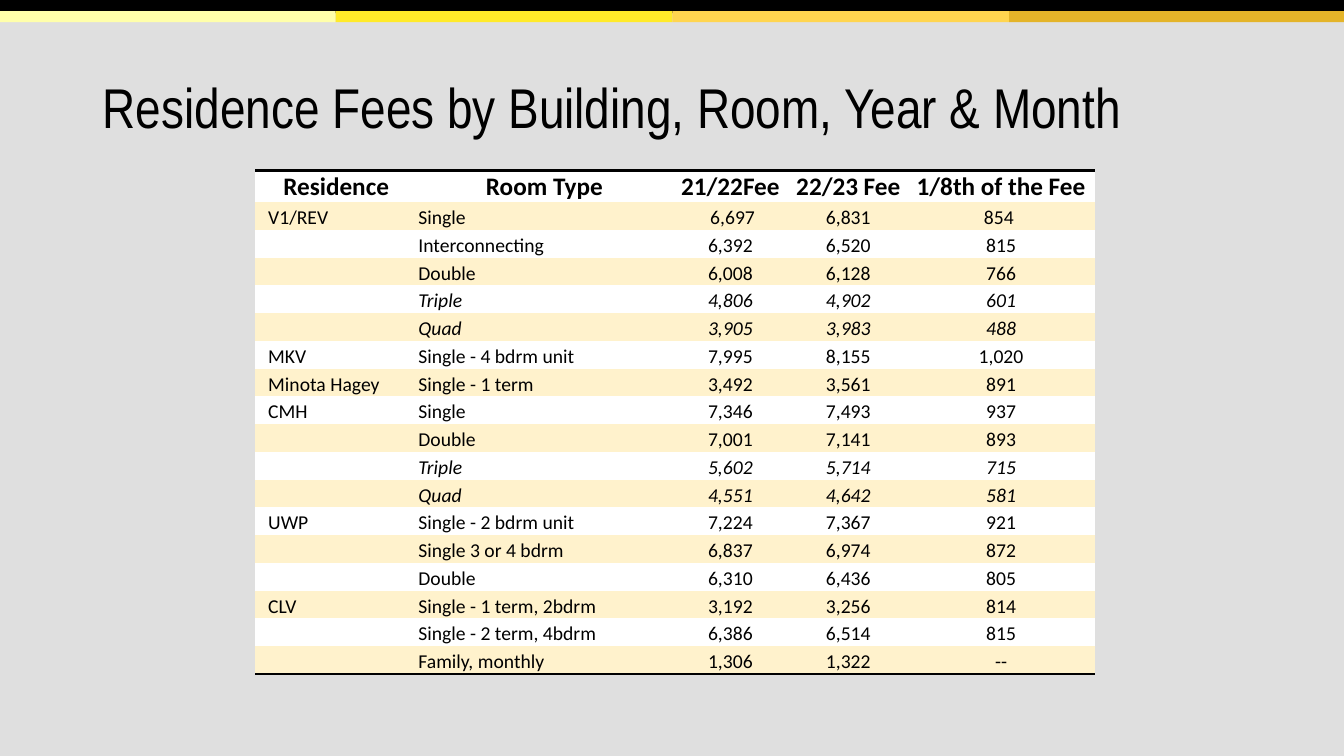
from typing import NamedTuple

from lxml import etree
from pptx import Presentation
from pptx.dml.color import RGBColor
from pptx.enum.shapes import MSO_SHAPE
from pptx.enum.text import MSO_ANCHOR, MSO_AUTO_SIZE, PP_ALIGN
from pptx.oxml.ns import qn
from pptx.util import Inches, Pt

RECTANGLE = MSO_SHAPE.RECTANGLE
MIDDLE, BOTTOM = MSO_ANCHOR.MIDDLE, MSO_ANCHOR.BOTTOM
LEFT, CENTER = PP_ALIGN.LEFT, PP_ALIGN.CENTER
NO_AUTOFIT = MSO_AUTO_SIZE.NONE
TITLE_ONLY_LAYOUT = 5
NO_GRID_STYLE = "{2D5ABB26-0587-4C30-8999-92F81FD0307C}"

COLORS = {
    "background": "DFDFDF",
    "black": "000000",
    "white": "FFFFFF",
    "cream": "FFF2CC",
    "pale yellow": "FFFFAA",
    "yellow": "FFEA29",
    "amber": "FFD54F",
    "gold": "E4B429",
}
TITLE_FONT, TABLE_FONT = "Arial Narrow", "Calibri"
HEADER_SIZE, BODY_SIZE = 18, 14
HEADER_HEIGHT, BODY_HEIGHT = 0.28, 4.68
COLUMN_WIDTHS = (1.61, 2.52, 1.17, 1.17, 1.86)
HEADINGS = ("Residence", "Room Type", "21/22Fee", "22/23 Fee", "1/8th of the Fee")


class Bar(NamedTuple):
    left: float
    top: float
    width: float
    height: float
    color: str


class Fee(NamedTuple):
    residence: str
    room: str
    last_year: str
    this_year: str
    eighth: str


class CellStyle(NamedTuple):
    fill: str
    size: int
    bold: bool = False
    italic: bool = False
    centered: bool = True
    indent: float = 0
    border: str = ""


BARS = [Bar(-0.01, 0, 13.35, 0.13, "black")] + [
    Bar(-0.01 + 3.34 * index, 0.11, 3.34, 0.11, color)
    for index, color in enumerate(("pale yellow", "yellow", "amber", "gold"))
]

FEES = [
    Fee("V1/REV", "Single", " 6,697", "6,831", "854 "),
    Fee("", "Interconnecting", "6,392", "6,520", "815"),
    Fee("", "Double", "6,008", "6,128", "766"),
    Fee("", "Triple", "4,806", "4,902", "601"),
    Fee("", "Quad", "3,905", "3,983", "488"),
    Fee("MKV", "Single - 4 bdrm unit", "7,995", "8,155", "1,020"),
    Fee("Minota Hagey", "Single - 1 term", "3,492", "3,561", "891"),
    Fee("CMH", "Single", "7,346", "7,493", "937"),
    Fee("", "Double", "7,001", "7,141", "893"),
    Fee("", "Triple", "5,602", "5,714", "715"),
    Fee("", "Quad", "4,551", "4,642", "581"),
    Fee("UWP", "Single - 2 bdrm unit", "7,224", "7,367", "921"),
    Fee("", "Single 3 or 4 bdrm", "6,837", "6,974", "872"),
    Fee("", "Double", "6,310", "6,436", "805"),
    Fee("CLV", "Single - 1 term, 2bdrm", "3,192", "3,256", "814"),
    Fee("", "Single - 2 term, 4bdrm", "6,386", "6,514", "815"),
    Fee("", "Family, monthly", "1,306", "1,322", "--"),
]


def rgb(name: str) -> RGBColor:
    return RGBColor.from_string(COLORS[name])


def draw_bar(slide, bar: Bar) -> None:
    shape = slide.shapes.add_shape(
        RECTANGLE, Inches(bar.left), Inches(bar.top), Inches(bar.width), Inches(bar.height)
    )
    shape.shadow.inherit = False
    shape.fill.solid()
    shape.fill.fore_color.rgb = rgb(bar.color)
    shape.line.fill.background()


def write_title(slide, text: str) -> None:
    title = slide.shapes.title
    title.left, title.top = Inches(0.92), Inches(0.79)
    title.width, title.height = Inches(11.5), Inches(0.6)
    text_frame = title.text_frame
    text_frame.text = text
    text_frame.auto_size = NO_AUTOFIT
    text_frame.vertical_anchor = MIDDLE
    paragraph = text_frame.paragraphs[0]
    paragraph.alignment = LEFT
    paragraph.line_spacing = 0.9
    font = paragraph.runs[0].font
    font.name, font.size = TITLE_FONT, Pt(40)
    font.color.rgb = rgb("black")


def add_border(cell, side: str) -> None:
    line = etree.Element(qn(f"a:{side}"), w=str(Pt(2)))
    solid = etree.SubElement(line, qn("a:solidFill"))
    etree.SubElement(solid, qn("a:srgbClr"), val=COLORS["black"])
    cell._tc.get_or_add_tcPr().insert(0, line)


def write_cell(cell, text: str, style: CellStyle) -> None:
    cell.fill.solid()
    cell.fill.fore_color.rgb = rgb(style.fill)
    cell.margin_left = cell.margin_right = cell.margin_top = Inches(0.01)
    cell.margin_bottom = 0
    cell.vertical_anchor = BOTTOM
    if style.border:
        add_border(cell, style.border)
    paragraph = cell.text_frame.paragraphs[0]
    if not text:
        # An empty cell still needs a small font, or its row grows
        etree.SubElement(paragraph._p, qn("a:endParaRPr"), sz=str(style.size * 100))
        return
    paragraph.text = text
    paragraph.alignment = CENTER if style.centered else LEFT
    if style.indent:
        paragraph._p.get_or_add_pPr().set("indent", str(Inches(style.indent)))
    font = paragraph.runs[0].font
    font.name, font.size = TABLE_FONT, Pt(style.size)
    font.bold, font.italic = style.bold, style.italic
    font.color.rgb = rgb("black")


def draw_fee_table(slide) -> None:
    frame = slide.shapes.add_table(
        len(FEES) + 1, len(HEADINGS), Inches(2.53), Inches(1.69),
        Inches(sum(COLUMN_WIDTHS)), Inches(HEADER_HEIGHT + BODY_HEIGHT),
    )
    table = frame.table
    table.first_row = table.horz_banding = False
    for style_id in frame.element.iter(qn("a:tableStyleId")):
        style_id.text = NO_GRID_STYLE
    for column, width in zip(table.columns, COLUMN_WIDTHS):
        column.width = Inches(width)
    for row in table.rows:
        row.height = Inches(BODY_HEIGHT / len(FEES))
    table.rows[0].height = Inches(HEADER_HEIGHT)

    # Header row
    for column, heading in enumerate(HEADINGS):
        style = CellStyle("white", HEADER_SIZE, bold=True, border="lnT")
        write_cell(table.cell(0, column), heading, style)

    # Fee rows
    for row, fee in enumerate(FEES, start=1):
        for column, text in enumerate(fee):
            style = CellStyle(
                fill="cream" if row % 2 else "white",
                size=BODY_SIZE,
                italic=fee.room in ("Triple", "Quad"),
                centered=column > 1,
                indent=0.12 if column == 0 else 0,
                border="lnB" if row == len(FEES) else "",
            )
            write_cell(table.cell(row, column), text, style)


def main() -> None:
    presentation = Presentation()
    presentation.slide_width, presentation.slide_height = Inches(13.33), Inches(7.5)
    slide = presentation.slides.add_slide(presentation.slide_layouts[TITLE_ONLY_LAYOUT])

    # Background and colour bars
    slide.background.fill.solid()
    slide.background.fill.fore_color.rgb = rgb("background")
    for bar in BARS:
        draw_bar(slide, bar)

    # Title and table
    write_title(slide, "Residence Fees by Building, Room, Year & Month")
    draw_fee_table(slide)
    presentation.save("out.pptx")


if __name__ == "__main__":
    main()
